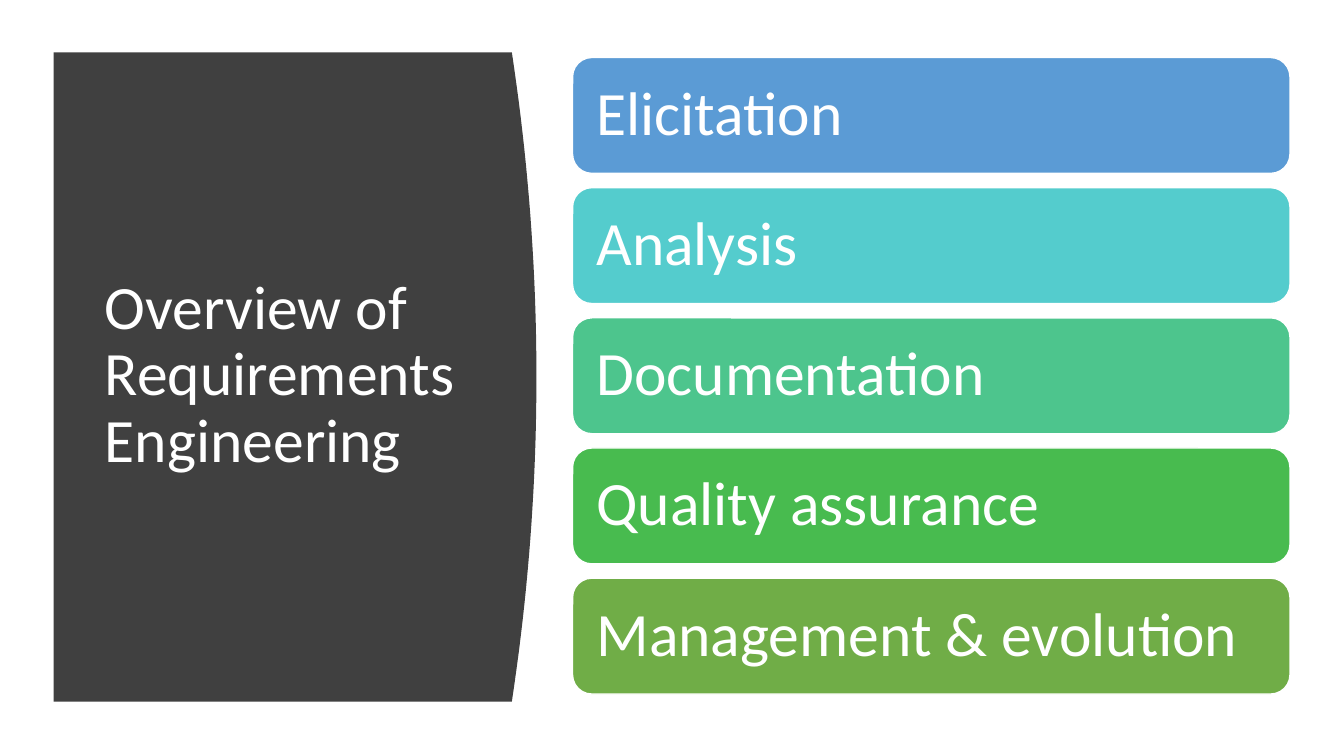
from pptx import Presentation
from pptx.dml.color import RGBColor
from pptx.enum import shapes, text
from pptx.util import Cm, Pt

FONT = "Calibri"
WHITE = "FFFFFF"
TOPICS = [
    ("Elicitation", "5B9BD5"),
    ("Analysis", "54CCCD"),
    ("Documentation", "4DC58D"),
    ("Quality assurance", "48BB4F"),
    ("Management & evolution", "70AD47"),
]


def color(hex_value):
    return RGBColor.from_string(hex_value)


def fill_shape(sp, hex_value):
    sp.shadow.inherit = False
    sp.fill.solid()
    sp.fill.fore_color.rgb = color(hex_value)


def write(sp, words):
    tf = sp.text_frame
    tf.text = words
    tf.word_wrap = True
    tf.auto_size = text.MSO_AUTO_SIZE.NONE
    tf.vertical_anchor = text.MSO_ANCHOR.MIDDLE
    p = tf.paragraphs[0]
    p.alignment = text.PP_ALIGN.LEFT
    p.line_spacing = 0.9
    p.font.name = FONT
    p.font.size = Pt(44)
    p.font.color.rgb = color(WHITE)
    return tf


def add_panel(slide):
    """Dark panel whose right edge bulges as a parabola."""
    left, top, bottom = 1.35, 1.32, 17.68
    peak, bulge, steps = 13.52, 0.62, 40
    edge = []
    for i in range(steps + 1):
        t = 2 * i / steps - 1
        y = top + (bottom - top) * i / steps
        edge.append((Cm(peak - bulge * t * t), Cm(y)))
    builder = slide.shapes.build_freeform(Cm(left), Cm(top))
    builder.add_line_segments(edge + [(Cm(left), Cm(bottom))], close=True)
    sp = builder.convert_to_shape()
    fill_shape(sp, "404040")
    sp.line.fill.background()
    return sp


def set_title(slide, words):
    title = slide.shapes.title
    title.left, title.top = Cm(2.39), Cm(2.82)
    title.width, title.height = Cm(9.5), Cm(13.31)
    write(title, words)
    return title


def add_card(slide, top, words, hex_value):
    sp = slide.shapes.add_shape(shapes.MSO_SHAPE.ROUNDED_RECTANGLE,
                                Cm(14.43), Cm(top), Cm(18.08), Cm(2.92))
    fill_shape(sp, hex_value)
    sp.line.color.rgb = color(WHITE)
    sp.line.width = Pt(1)
    tf = write(sp, words)
    tf.margin_left = tf.margin_right = Cm(0.46)
    tf.margin_top = tf.margin_bottom = Cm(0.46)


def main():
    prs = Presentation()
    prs.slide_width, prs.slide_height = Cm(33.87), Cm(19.05)
    slide = prs.slides.add_slide(prs.slide_layouts[5])

    # Title on its dark panel
    title = set_title(slide, "Overview of Requirements Engineering")
    panel = add_panel(slide)
    title._element.addprevious(panel._element)

    # Stack of topic cards
    for i, (words, hex_value) in enumerate(TOPICS):
        add_card(slide, 1.45 + 3.28 * i, words, hex_value)

    prs.save("out.pptx")


if __name__ == "__main__":
    main()
